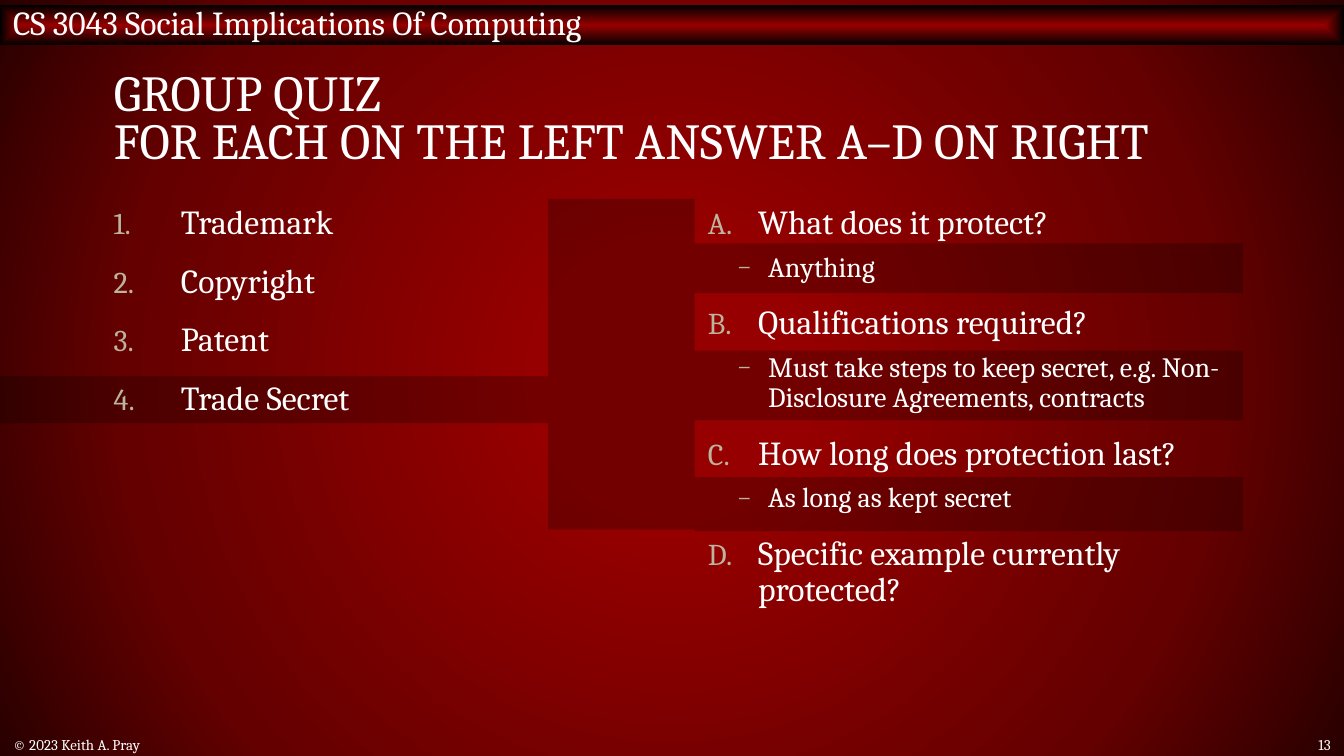
"""Build the group quiz slide on intellectual property protection."""
from lxml import etree
from pptx import Presentation
from pptx.dml.color import RGBColor
from pptx.enum.shapes import MSO_SHAPE
from pptx.enum.text import MSO_ANCHOR, MSO_AUTO_SIZE, PP_ALIGN
from pptx.oxml.ns import qn
from pptx.util import Cm, Pt

RECTANGLE = MSO_SHAPE.RECTANGLE
MIDDLE, TOP = MSO_ANCHOR.MIDDLE, MSO_ANCHOR.TOP
LEFT, RIGHT = PP_ALIGN.LEFT, PP_ALIGN.RIGHT
NO_AUTOFIT = MSO_AUTO_SIZE.NONE
FONT = "Cambria"
COLORS = {
    "text": "FFFFFF", "bullet": "BCB49E", "black": "000000",
    "red": "960000", "dark_red": "650000", "deep_red": "290000",
}


def set_path_gradient(properties, path_kind, stops):
    gradient = etree.Element(qn("a:gradFill"), rotWithShape="1")
    stop_list = etree.SubElement(gradient, qn("a:gsLst"))
    for position, color in stops:
        stop = etree.SubElement(stop_list, qn("a:gs"), pos=str(position * 1000))
        etree.SubElement(stop, qn("a:srgbClr"), val=COLORS[color])
    gradient_path = etree.SubElement(gradient, qn("a:path"))
    gradient_path.set("path", path_kind)
    etree.SubElement(gradient_path, qn("a:fillToRect"), l="50000", t="50000", r="50000", b="50000")
    properties.replace(properties.find(qn("a:solidFill")), gradient)


def format_text(text_frame, size, anchor=MIDDLE, alignment=LEFT):
    text_frame.word_wrap = True
    text_frame.auto_size = NO_AUTOFIT
    text_frame.vertical_anchor = anchor
    for paragraph in text_frame.paragraphs:
        paragraph.alignment = alignment
        for run in paragraph.runs:
            run.font.name = FONT
            run.font.size = Pt(size)
            run.font.color.rgb = RGBColor.from_string(COLORS["text"])


presentation = Presentation()
presentation.slide_width, presentation.slide_height = Cm(25.4), Cm(14.29)
slide = presentation.slides.add_slide(presentation.slide_layouts[5])
slide.background.fill.solid()
set_path_gradient(
    slide.element.find(".//" + qn("p:bgPr")), "circle",
    [(17, "red"), (71, "dark_red"), (100, "deep_red")],
)

header = slide.shapes.add_shape(RECTANGLE, 0, Cm(0.1), Cm(25.4), Cm(0.76))
header.shadow.inherit = False
header.line.fill.background()
header.fill.solid()
set_path_gradient(header.element.spPr, "shape", [(0, "red"), (100, "black")])
header.text_frame.text = "CS 3043 Social Implications Of Computing"
header.text_frame.margin_top = 0
format_text(header.text_frame, 18)

COLUMN_WIDTH, COLUMN_TOP = 10.36, 3.76
ANSWER_LEFT = 13.13
highlights = [
    (0, 7.11, COLUMN_WIDTH, 0.89),
    (COLUMN_WIDTH, COLUMN_TOP, ANSWER_LEFT - COLUMN_WIDTH, 6.25),
    (ANSWER_LEFT, 4.6, COLUMN_WIDTH, 0.94),
    (ANSWER_LEFT, 6.63, COLUMN_WIDTH, 1.32),
    (ANSWER_LEFT, 9.02, COLUMN_WIDTH, 1.02),
]
for bounds in highlights:
    highlight = slide.shapes.add_shape(RECTANGLE, *map(Cm, bounds))
    highlight.shadow.inherit = False
    highlight.line.fill.background()
    highlight.fill.solid()
    highlight.fill.fore_color.rgb = RGBColor.from_string(COLORS["black"])
    color = highlight.element.spPr.find(qn("a:solidFill")).find(qn("a:srgbClr"))
    etree.SubElement(color, qn("a:alpha"), val="24000")

title = slide.shapes.title
title.left, title.top, title.width, title.height = Cm(1.9), Cm(1.02), Cm(21.6), Cm(2.54)
title.text_frame.text = "GROUP QUIZ\vFOR EACH ON THE LEFT ANSWER A–D ON RIGHT"
title.text_frame.paragraphs[0].line_spacing = 0.8
format_text(title.text_frame, 27)

terms = [(0, "Trademark"), (0, "Copyright"), (0, "Patent"), (0, "Trade Secret")]
questions = [
    (0, "What does it protect?"),
    (1, "Anything"),
    (0, "Qualifications required?"),
    (1, "Must take steps to keep secret, e.g. Non-Disclosure Agreements, contracts"),
    (0, "How long does protection last?"),
    (1, "As long as kept secret"),
    (0, "Specific example currently protected?"),
]
columns = [
    (1.9, terms, "arabicPeriod", 1.27),
    (ANSWER_LEFT, questions, "alphaUcPeriod", 0.95),
]
for left, items, numbering, hanging in columns:
    column = slide.shapes.add_textbox(Cm(left), Cm(COLUMN_TOP), Cm(COLUMN_WIDTH), Cm(9.32))
    text_frame = column.text_frame
    text_frame.text = "\n".join(text for level, text in items)
    format_text(text_frame, 18, TOP)
    for index, (level, text) in enumerate(items):
        paragraph = text_frame.paragraphs[index]
        margin, indent = (1.14, 0.57) if level else (hanging, hanging)
        properties = paragraph._p.get_or_add_pPr()
        properties.set("marL", str(Cm(margin)))
        properties.set("indent", str(-Cm(indent)))
        bullet_color = etree.SubElement(properties, qn("a:buClr"))
        etree.SubElement(bullet_color, qn("a:srgbClr"), val=COLORS["bullet"])
        etree.SubElement(properties, qn("a:buSzPct"), val="90000")
        etree.SubElement(properties, qn("a:buFont"), typeface=FONT)
        if level:
            etree.SubElement(properties, qn("a:buChar"), char="–")
            paragraph.runs[0].font.size = Pt(15)
        else:
            etree.SubElement(properties, qn("a:buAutoNum"), type=numbering)
        paragraph.level = level
        paragraph.line_spacing = 0.9
        paragraph.space_before = Pt(0 if index == 0 else 6 if level else 12)

footers = [
    (0, 15.44, "© 2023 Keith A. Pray", LEFT),
    (23.67, 1.73, "13", RIGHT),
]
for left, width, text, alignment in footers:
    footer = slide.shapes.add_textbox(Cm(left), Cm(13.87), Cm(width), Cm(0.41))
    footer.text_frame.text = text
    format_text(footer.text_frame, 8, MIDDLE, alignment)

presentation.save("out.pptx")
